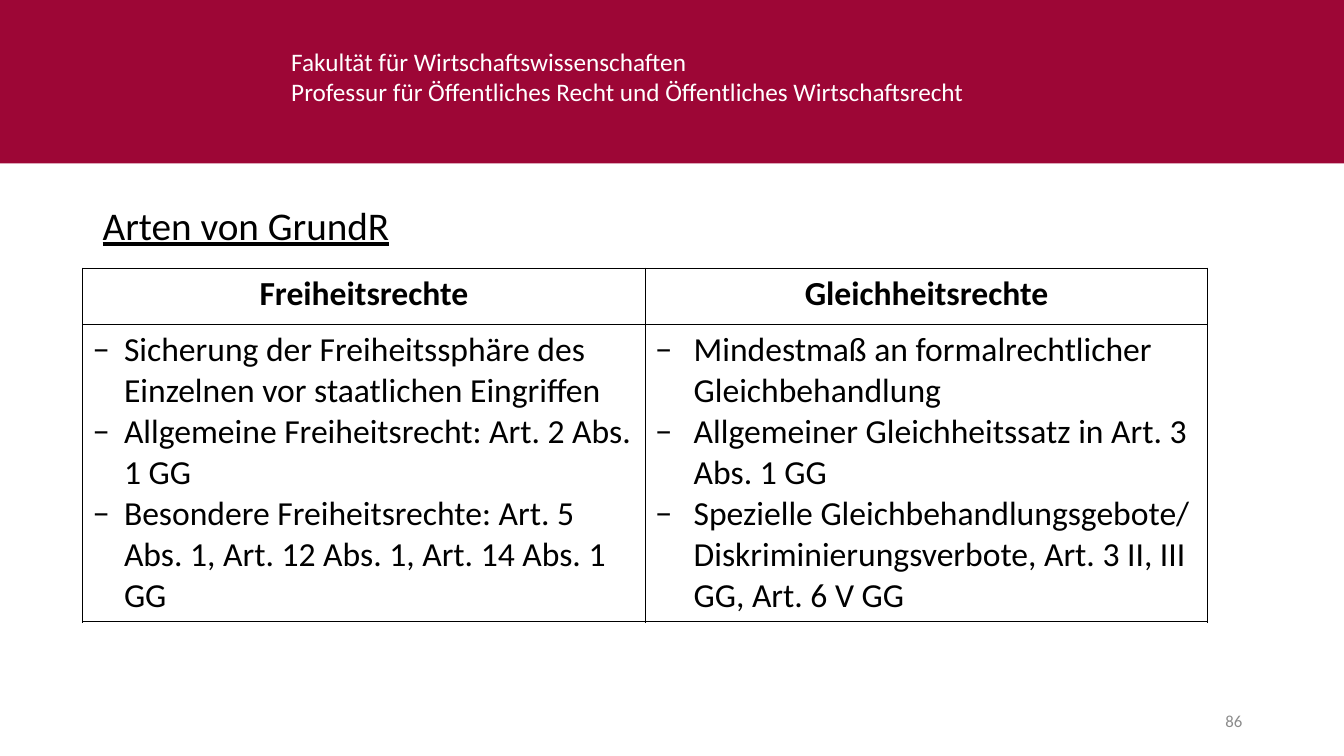
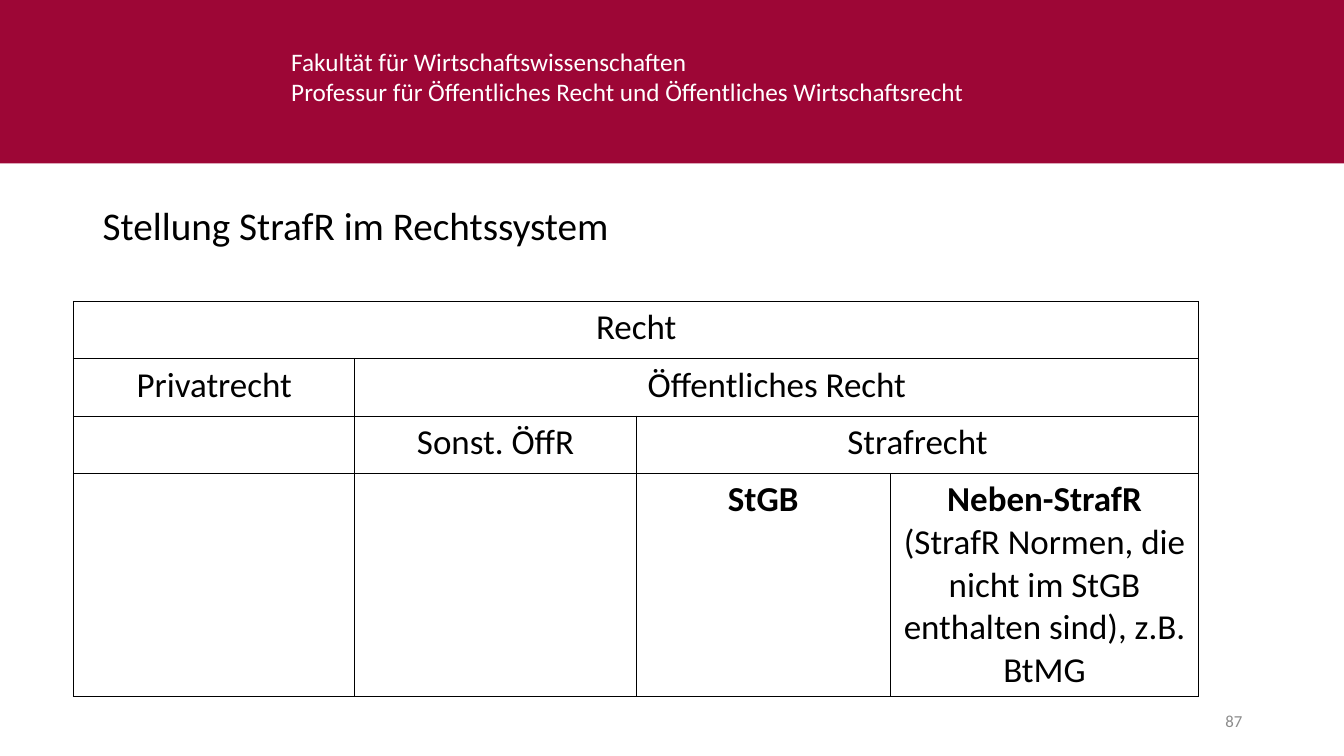
from lxml import etree
from pptx import Presentation
from pptx.dml.color import RGBColor
from pptx.enum import shapes, text
from pptx.oxml import ns
from pptx.util import Inches, Pt

CRIMSON = RGBColor(0x9D, 0x06, 0x36)
WHITE = RGBColor(0xFF, 0xFF, 0xFF)
BLACK = RGBColor(0, 0, 0)
GREY = RGBColor(0x8C, 0x8C, 0x8C)
FONT = "Calibri"
WIDTH, HEIGHT = 13.33, 7.5

FACULTY = [
    "Fakultät für Wirtschaftswissenschaften",
    "Professur für Öffentliches Recht und Öffentliches Wirtschaftsrecht",
]

# Each cell: row, column, columns spanned, paragraphs, bold, bullet indent
RIGHTS = {
    "title": "Arten von GrundR", "underline": True, "number": "86",
    "at": (0.82, 2.66), "size": 24,
    "columns": [5.58, 5.58], "rows": [0.56, 2.95],
    "cells": [
        (0, 0, 1, ["Freiheitsrechte"], True, 0),
        (0, 1, 1, ["Gleichheitsrechte"], True, 0),
        (1, 0, 1, [
            "Sicherung der Freiheitssphäre des Einzelnen vor staatlichen Eingriffen",
            "Allgemeine Freiheitsrecht: Art. 2 Abs. 1 GG",
            "Besondere Freiheitsrechte: Art. 5 Abs. 1, Art. 12 Abs. 1, Art. 14 Abs. 1 GG",
        ], False, 0.31),
        (1, 1, 1, [
            "Mindestmaß an formalrechtlicher Gleichbehandlung",
            "Allgemeiner Gleichheitssatz in Art. 3 Abs. 1 GG",
            "Spezielle Gleichbehandlungsgebote/ Diskriminierungsverbote, "
            "Art. 3 II, III GG, Art. 6 V GG",
        ], False, 0.38),
    ],
}
SYSTEM = {
    "title": "Stellung StrafR im Rechtssystem", "underline": False, "number": "87",
    "at": (0.73, 2.99), "size": 25,
    "columns": [2.79, 2.79, 2.52, 3.06], "rows": [0.57, 0.57, 0.57, 2.21],
    "cells": [
        (0, 0, 4, ["Recht"], False, 0),
        (1, 0, 1, ["Privatrecht"], False, 0),
        (1, 1, 3, ["Öffentliches Recht"], False, 0),
        (2, 1, 1, ["Sonst. ÖffR"], False, 0),
        (2, 2, 2, ["Strafrecht"], False, 0),
        (3, 2, 1, ["StGB"], True, 0),
        (3, 3, 1, [[
            ("Neben-StrafR ", True),
            ("(StrafR Normen, die nicht im StGB enthalten sind), z.B. BtMG", False),
        ]], None, 0),
    ],
}


def style(para, size, color, bold=None):
    font = para.font
    font.name, font.size, font.bold = FONT, Pt(size), bold
    font.color.rgb = color


def add_text(page, at, lines, size, color):
    box = page.shapes.add_textbox(*map(Inches, at))
    frame = box.text_frame
    frame.word_wrap = True
    frame.text = "\n".join(lines)
    for para in frame.paragraphs:
        style(para, size, color)
    return frame


def add_bullet(para, indent):
    properties = para._p.get_or_add_pPr()
    properties.set("marL", str(Inches(indent)))
    properties.set("indent", str(-Inches(indent)))
    etree.SubElement(properties, ns.qn("a:buFont"), typeface=FONT)
    etree.SubElement(properties, ns.qn("a:buChar"), char="−")


def add_borders(cell):
    properties = cell._tc.get_or_add_tcPr()
    for place, side in enumerate(("lnL", "lnR", "lnT", "lnB")):
        line = etree.Element(ns.qn("a:" + side), w=str(Pt(1)))
        fill = etree.SubElement(line, ns.qn("a:solidFill"))
        etree.SubElement(fill, ns.qn("a:srgbClr"), val=str(BLACK))
        properties.insert(place, line)


def fill_cell(cell, lines, size, bold, indent):
    for index, line in enumerate(lines):
        frame = cell.text_frame
        para = frame.paragraphs[0] if index == 0 else frame.add_paragraph()
        if indent:
            add_bullet(para, indent)
        else:
            para.alignment = text.PP_ALIGN.CENTER
        style(para, size, BLACK, bold)
        spans = [(line, bold)] if isinstance(line, str) else line
        for words, strong in spans:
            span = para.add_run()
            span.text = words
            if bold is None:
                span.font.bold = strong


def add_table(page, content):
    columns, rows = content["columns"], content["rows"]
    frame = (*content["at"], sum(columns), sum(rows))
    table = page.shapes.add_table(len(rows), len(columns), *map(Inches, frame)).table
    table.first_row = table.horz_banding = False
    for column, width in zip(table.columns, columns):
        column.width = Inches(width)
    for row, height in zip(table.rows, rows):
        row.height = Inches(height)
    for cell in table.iter_cells():
        cell.fill.background()
        add_borders(cell)
    for row, column, span, lines, bold, indent in content["cells"]:
        cell = table.cell(row, column)
        if span > 1:
            cell.merge(table.cell(row, column + span - 1))
        fill_cell(cell, lines, content["size"], bold, indent)


def add_page(deck, content):
    page = deck.slides.add_slide(deck.slide_layouts[6])
    band = page.shapes.add_shape(
        shapes.MSO_SHAPE.RECTANGLE, 0, 0, Inches(WIDTH), Inches(1.62))
    band.shadow.inherit = False
    band.fill.solid()
    band.fill.fore_color.rgb = CRIMSON
    band.line.fill.background()
    add_text(page, (2.79, 0.41, 8.41, 0.71), FACULTY, 18, WHITE)

    title = add_text(page, (0.92, 2, 11.5, 0.6), [content["title"]], 28, BLACK)
    title.paragraphs[0].line_spacing = 0.9
    title.paragraphs[0].font.underline = content["underline"]

    number = add_text(page, (9.42, 6.95, 3, 0.4), [content["number"]], 12, GREY)
    number.vertical_anchor = text.MSO_ANCHOR.MIDDLE
    number.paragraphs[0].alignment = text.PP_ALIGN.RIGHT
    add_table(page, content)


def main():
    deck = Presentation()
    deck.slide_width, deck.slide_height = Inches(WIDTH), Inches(HEIGHT)
    for content in (RIGHTS, SYSTEM):
        add_page(deck, content)
    deck.save("out.pptx")


if __name__ == "__main__":
    main()
